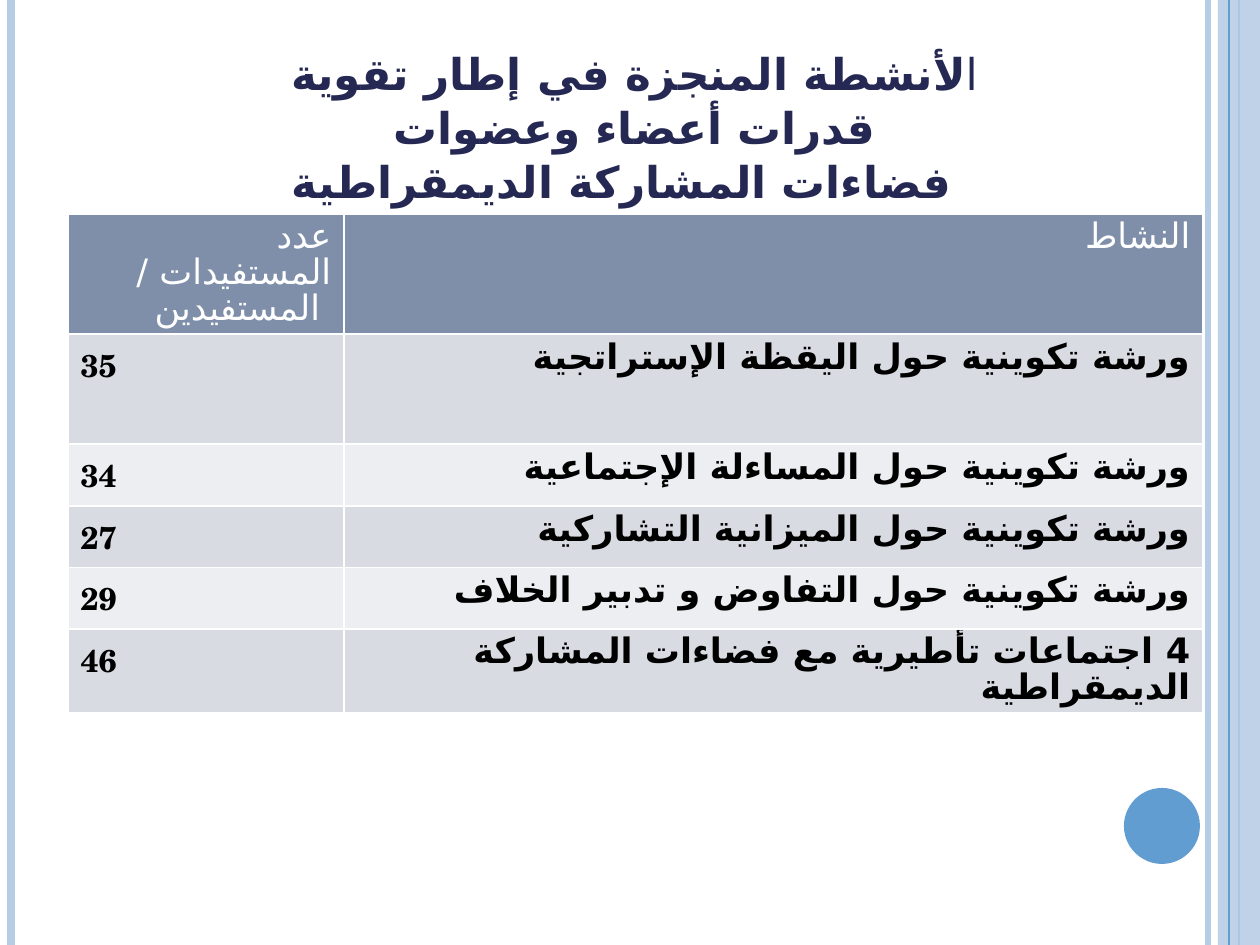
from lxml.etree import SubElement
from pptx import Presentation
from pptx.dml.color import RGBColor
from pptx.enum.shapes import MSO_CONNECTOR, MSO_SHAPE
from pptx.enum.text import MSO_ANCHOR, PP_ALIGN
from pptx.oxml.ns import qn
from pptx.util import Emu, Pt

PALE_BLUE = RGBColor(0xB7, 0xCC, 0xE5)
BLUE = RGBColor(0x62, 0x9D, 0xD1)
NAVY = RGBColor(0x24, 0x28, 0x52)
WHITE = RGBColor(0xFF, 0xFF, 0xFF)
BLACK = RGBColor(0x00, 0x00, 0x00)
HEADER_FILL = RGBColor(0x7F, 0x8F, 0xA9)
BANDS = (RGBColor(0xD8, 0xDB, 0xE2), RGBColor(0xEC, 0xEE, 0xF1))

TITLE_FONT = "Arial"
TABLE_FONT = "TeX Gyre Schola"
ARABIC_FONT = "DejaVu Sans"
WIDTH, HEIGHT = 1260, 945

HEADER = ("عدد المستفيدات / المستفيدين ", "النشاط")
ACTIVITIES = (
    ("35", "ورشة تكوينية حول اليقظة الإستراتجية"),
    ("34", "ورشة تكوينية حول المساءلة الإجتماعية"),
    ("27", "ورشة تكوينية حول الميزانية التشاركية"),
    ("29", "ورشة تكوينية حول التفاوض و تدبير الخلاف"),
    ("46", "4 اجتماعات تأطيرية مع فضاءات المشاركة الديمقراطية"),
)
COLUMN_WIDTHS = (276, 859)
ROW_HEIGHTS = (118, 110, 62, 61, 61, 83)


def px(length):
    return Emu(round(length * 914400 / 126))


class SlideBuilder:
    """Holds the current slide and draws styled elements on it."""

    def __init__(self, slide):
        self.slide = slide

    def style(self, paragraph, font, size, color, bold, align, rtl=False):
        paragraph.alignment = align
        paragraph.font.name = font
        paragraph.font.size = Pt(size)
        paragraph.font.color.rgb = color
        paragraph.font.bold = bold
        SubElement(paragraph.font._element, qn("a:cs")).set("typeface", ARABIC_FONT)
        if rtl:
            paragraph._p.get_or_add_pPr().set("rtl", "1")

    def rule(self, x, color, weight):
        line = self.slide.shapes.add_connector(
            MSO_CONNECTOR.STRAIGHT, px(x), 0, px(x), px(HEIGHT))
        line.line.color.rgb = color
        line.line.width = Pt(weight)
        SubElement(line._element.spPr, qn("a:effectLst"))

    def shape(self, kind, x, y, width, height, color, opacity=100):
        shape = self.slide.shapes.add_shape(kind, px(x), px(y), px(width), px(height))
        shape.shadow.inherit = False
        shape.line.fill.background()
        shape.fill.solid()
        shape.fill.fore_color.rgb = color
        if opacity < 100:
            color_element = shape._element.spPr.find(qn("a:solidFill"))[0]
            SubElement(color_element, qn("a:alpha")).set("val", str(opacity * 1000))

    def title(self, x, y, width, height, paragraphs):
        """Each paragraph is (rtl, indent, runs); each run is (text, bold)."""
        title = self.slide.shapes.title
        title.left, title.top, title.width, title.height = map(px, (x, y, width, height))
        frame = title.text_frame
        frame.word_wrap = True
        frame.vertical_anchor = MSO_ANCHOR.TOP
        frame.margin_left = frame.margin_right = px(30)
        for index, (rtl, indent, runs) in enumerate(paragraphs):
            paragraph = frame.add_paragraph() if index else frame.paragraphs[0]
            self.style(paragraph, TITLE_FONT, 25, NAVY, None, PP_ALIGN.CENTER, rtl)
            paragraph.line_spacing = 1.03
            paragraph._p.get_or_add_pPr().set("marL", str(px(indent)))
            for text, bold in runs:
                run = paragraph.add_run()
                run.text = text
                run.font.bold = bold

    def cell(self, cell, text, fill, size, color, bold, align, rtl):
        cell.text = text
        paragraph = cell.text_frame.paragraphs[0]
        self.style(paragraph, TABLE_FONT, size, color, bold, align, rtl)
        if align == PP_ALIGN.RIGHT:
            paragraph.line_spacing = 0.88
        properties = cell._tc.get_or_add_tcPr()
        for side in ("L", "R", "T", "B"):
            border = SubElement(properties, qn(f"a:ln{side}"), w=str(Pt(1)))
            border_fill = SubElement(border, qn("a:solidFill"))
            SubElement(border_fill, qn("a:srgbClr"), val=str(WHITE))
        cell.fill.solid()
        cell.fill.fore_color.rgb = fill

    def table(self, x, y, header, rows):
        table = self.slide.shapes.add_table(
            len(rows) + 1, len(header), px(x), px(y),
            px(sum(COLUMN_WIDTHS)), px(sum(ROW_HEIGHTS))).table
        for column, width in zip(table.columns, COLUMN_WIDTHS):
            column.width = px(width)
        for row, height in zip(table.rows, ROW_HEIGHTS):
            row.height = px(height)
        for column, text in enumerate(header):
            self.cell(table.cell(0, column), text, HEADER_FILL, 20, WHITE,
                      False, PP_ALIGN.RIGHT, column == 1)
        for index, (count, activity) in enumerate(rows):
            fill = BANDS[index % 2]
            self.cell(table.cell(index + 1, 0), count, fill, 18, BLACK,
                      True, PP_ALIGN.LEFT, False)
            self.cell(table.cell(index + 1, 1), activity, fill, 20, BLACK,
                      True, PP_ALIGN.RIGHT, True)


def main():
    presentation = Presentation()
    presentation.slide_width = px(WIDTH)
    presentation.slide_height = px(HEIGHT)
    builder = SlideBuilder(presentation.slides.add_slide(presentation.slide_layouts[5]))

    builder.rule(1208, PALE_BLUE, 3)
    builder.rule(11, PALE_BLUE, 4.5)
    builder.rule(1239, BLUE, 1.5)
    builder.shape(MSO_SHAPE.RECTANGLE, 1218, 0, 42, HEIGHT, PALE_BLUE, opacity=87)
    builder.rule(1229, BLUE, 0.75)
    builder.shape(MSO_SHAPE.OVAL, 1124, 788, 76, 76, BLUE)

    builder.table(68, 214, HEADER, ACTIVITIES)
    builder.title(220, 39, 829, 170, (
        (False, 0, (("ا", False),
                    ("لأنشطة المنجزة في إطار تقوية قدرات أعضاء وعضوات", True))),
        (True, 26, (("فضاءات المشاركة الديمقراطية", True),)),
    ))
    presentation.save("out.pptx")


if __name__ == "__main__":
    main()
